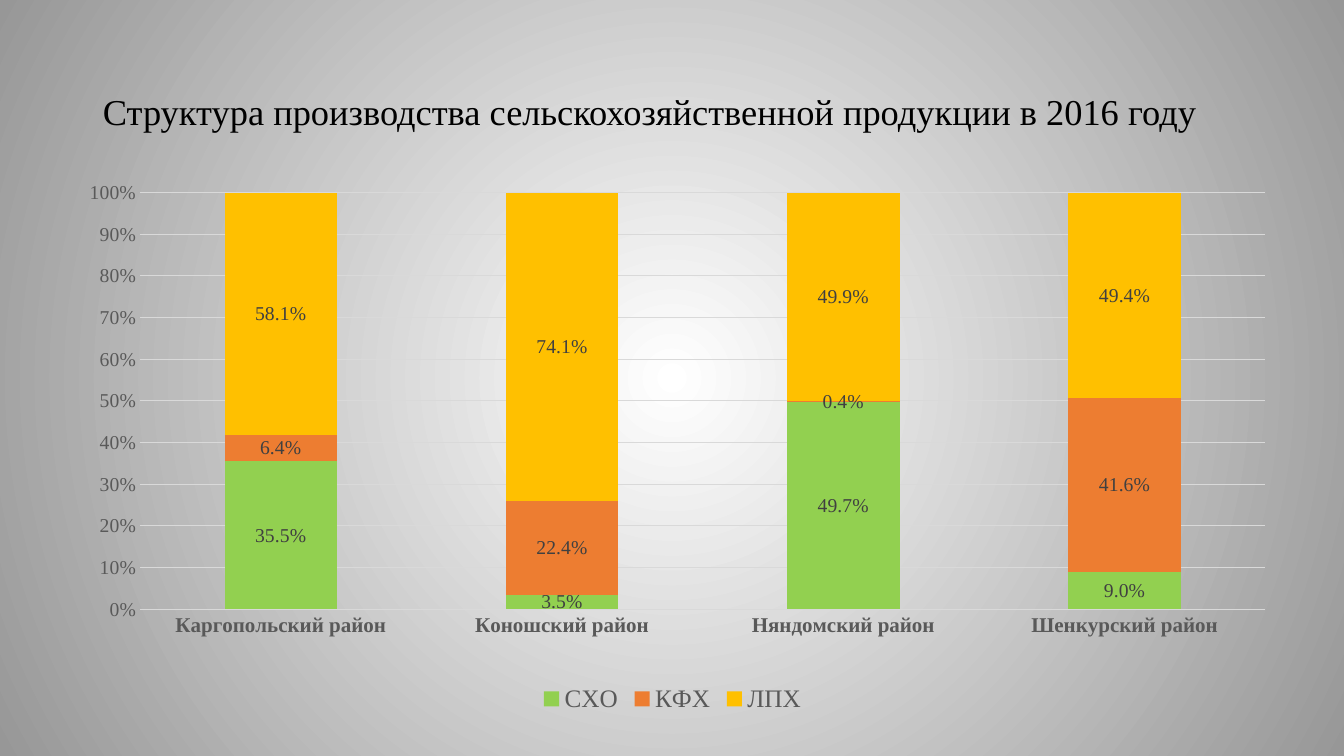
from lxml import etree
from pptx import Presentation
from pptx import util as u
from pptx.chart.data import CategoryChartData
from pptx.dml.color import RGBColor
from pptx.enum import chart as ch, text
from pptx.oxml import parse_xml
from pptx.oxml.ns import nsdecls, qn

COLORS = {
    "title": "000000", "axis": "595959", "label": "404040", "grid": "D9D9D9",
    "center": "FFFFFF", "edge": "979797",
    "СХО": "92D050", "КФХ": "ED7D31", "ЛПХ": "FFC000",
}
DISTRICTS = ["Каргопольский район", "Коношский район",
             "Няндомский район", "Шенкурский район"]
SHARES = {
    "СХО": [0.355, 0.035, 0.497, 0.09],
    "КФХ": [0.064, 0.224, 0.004, 0.416],
    "ЛПХ": [0.581, 0.741, 0.499, 0.494],
}
PLOT_AREA = {"x": 0.06, "y": 0.03, "w": 0.93, "h": 0.77}


def rgb(name):
    return RGBColor.from_string(COLORS[name])


class SlideBuilder:
    font_name = "Times New Roman"

    def __init__(self, deck):
        self.slide = deck.slides.add_slide(deck.slide_layouts[5])

    def style(self, font, size, color, bold=False):
        font.name = self.font_name
        font.size = u.Pt(size)
        font.bold = bold
        font.color.rgb = rgb(color)

    def background(self):
        """Fill the slide with a circular gradient around its centre."""
        fill = self.slide.background.fill
        fill.gradient()
        for stop, name in zip(fill.gradient_stops, ("center", "edge")):
            stop.color.rgb = rgb(name)
        gradient = self.slide.element.find(".//" + qn("a:gradFill"))
        linear = gradient.find(qn("a:lin"))
        gradient.replace(linear, parse_xml(
            f'<a:path {nsdecls("a")} path="circle">'
            '<a:fillToRect l="50000" t="50000" r="50000" b="50000"/></a:path>'))

    def title(self, wording, left, top, width, height):
        box = self.slide.shapes.title
        box.left, box.top = u.Inches(left), u.Inches(top)
        box.width, box.height = u.Inches(width), u.Inches(height)
        frame = box.text_frame
        frame.word_wrap = True
        frame.vertical_anchor = text.MSO_ANCHOR.MIDDLE
        para = frame.paragraphs[0]
        para.alignment = text.PP_ALIGN.LEFT
        para.line_spacing = 0.9
        span = para.add_run()
        span.text = wording
        self.style(span.font, 26, "title")

    def share_chart(self, left, top, width, height):
        data = CategoryChartData(number_format="0.0%")
        data.categories = DISTRICTS
        for name, values in SHARES.items():
            data.add_series(name, values)
        chart = self.slide.shapes.add_chart(
            ch.XL_CHART_TYPE.COLUMN_STACKED_100, u.Inches(left), u.Inches(top),
            u.Inches(width), u.Inches(height), data).chart
        chart.has_title = False
        self.style(chart.font, 14, "axis")
        self.columns(chart.plots[0])
        self.axes(chart)
        self.legend(chart)
        self.place_plot(chart)

    def columns(self, plot):
        plot.gap_width = 150
        plot.overlap = 100
        plot.vary_by_categories = False
        for series in plot.series:
            series.format.fill.solid()
            series.format.fill.fore_color.rgb = rgb(series.name)
            labels = series.data_labels
            labels.show_value = True
            labels.position = ch.XL_LABEL_POSITION.CENTER
            labels.number_format = "0.0%"
            labels.number_format_is_linked = False
            self.style(labels.font, 14, "label")

    def axes(self, chart):
        districts, shares = chart.category_axis, chart.value_axis
        for axis in (districts, shares):
            axis.major_tick_mark = axis.minor_tick_mark = ch.XL_TICK_MARK.NONE
        self.style(districts.tick_labels.font, 15, "axis", bold=True)
        self.style(shares.tick_labels.font, 14, "axis")
        shares.minimum_scale, shares.maximum_scale = 0, 1
        shares.major_unit = 0.1
        shares.tick_labels.number_format = "0%"
        shares.tick_labels.number_format_is_linked = False
        shares.has_major_gridlines = True
        shares.format.line.fill.background()
        for line in (districts.format.line, shares.major_gridlines.format.line):
            line.width = u.Pt(0.75)
            line.color.rgb = rgb("grid")

    def legend(self, chart):
        chart.has_legend = True
        chart.legend.position = ch.XL_LEGEND_POSITION.BOTTOM
        chart.legend.include_in_layout = False
        self.style(chart.legend.font, 18, "axis")

    def place_plot(self, chart):
        """Fix the inner plot area at fractions of the chart's size."""
        area = chart.element.find(".//" + qn("c:plotArea"))
        for automatic in area.findall(qn("c:layout")):
            area.remove(automatic)
        layout = parse_xml(f'<c:layout {nsdecls("c")}/>')
        manual = etree.SubElement(layout, qn("c:manualLayout"))
        settings = {"layoutTarget": "inner", "xMode": "edge", "yMode": "edge",
                    **PLOT_AREA}
        for tag, value in settings.items():
            etree.SubElement(manual, qn(f"c:{tag}")).set("val", str(value))
        area.insert(0, layout)


def main():
    deck = Presentation()
    deck.slide_width, deck.slide_height = u.Inches(13.33), u.Inches(7.5)
    page = SlideBuilder(deck)
    page.background()
    page.title("Структура производства сельскохозяйственной продукции в 2016 году",
               0.92, 0.4, 11.5, 1.45)
    page.share_chart(0.67, 1.75, 12, 5.37)
    deck.save("out.pptx")


if __name__ == "__main__":
    main()
